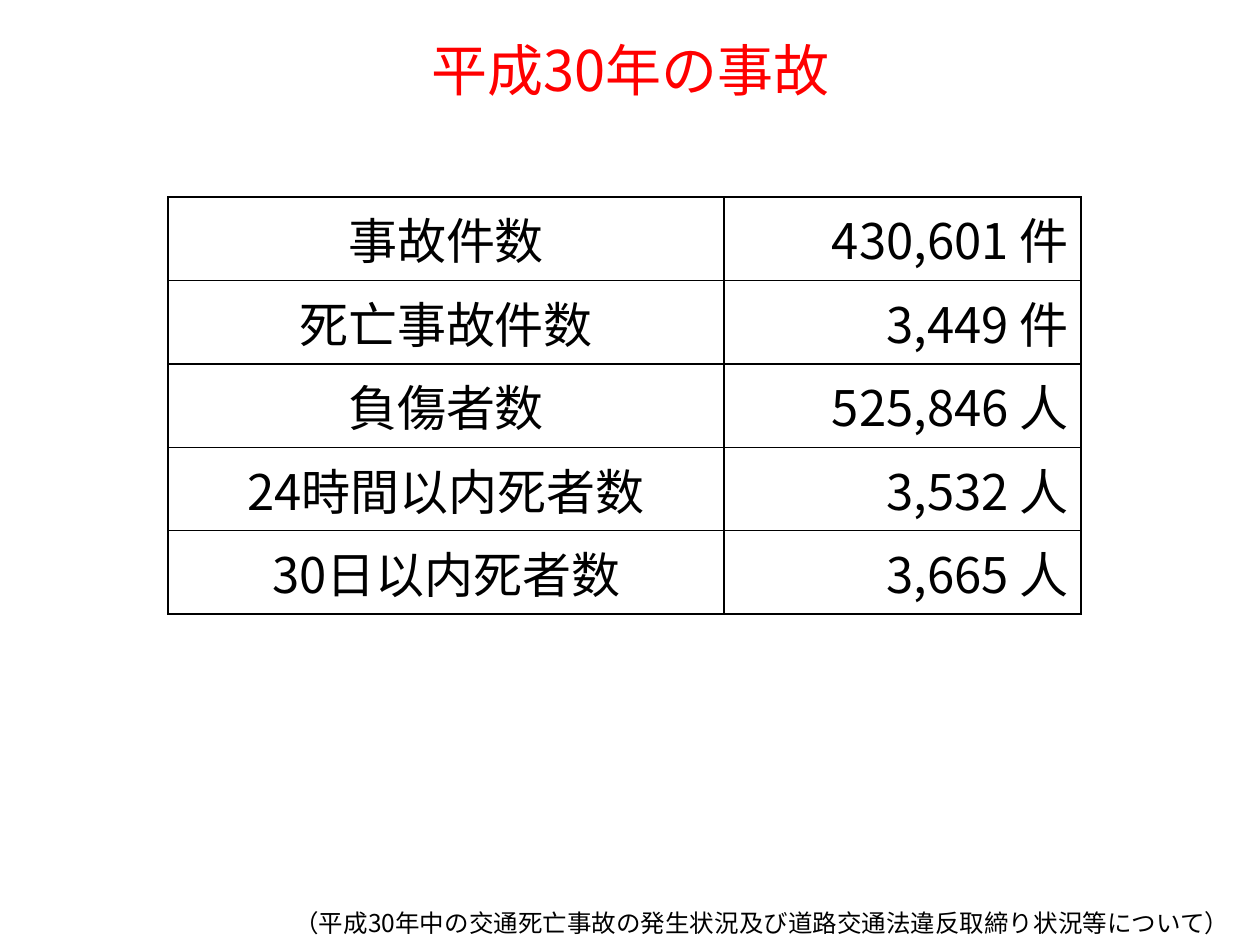
from lxml.etree import SubElement
from pptx import Presentation
from pptx.dml.color import RGBColor
from pptx.enum.text import MSO_ANCHOR as Anchor, MSO_AUTO_SIZE as AutoSize, PP_ALIGN as Align
from pptx.oxml.ns import qn
from pptx.util import Emu, Pt

PX = 914400 // 126
FONT = "Noto Sans CJK JP"
COLORS = {"title": "FF0000", "text": "000000", "border": "000000"}
COLUMN_WIDTHS = (556, 357)
ROW_HEIGHTS = (79, 79, 79, 82, 82)
ACCIDENTS = (
    ("事故件数", "430,601 件"),
    ("死亡事故件数", "3,449 件"),
    ("負傷者数", "525,846 人"),
    ("24時間以内死者数", "3,532 人"),
    ("30日以内死者数", "3,665 人"),
)


def px(length):
    """Turn whole pixels into EMU."""
    return Emu(length * PX)


def add_run(paragraph, text, size, color, align):
    """Add one formatted run to an aligned paragraph."""
    paragraph.alignment = align
    run = paragraph.add_run()
    run.text = text
    run.font.size = Pt(size)
    run.font.name = FONT
    run.font.color.rgb = RGBColor.from_string(COLORS[color])
    SubElement(run.font._element, qn("a:ea"), typeface=FONT)


def add_title(slide, text):
    """Place and fill the title placeholder."""
    title = slide.shapes.title
    title.left, title.top, title.width, title.height = map(px, (95, 26, 1071, 87))
    frame = title.text_frame
    frame.vertical_anchor = Anchor.MIDDLE
    frame.auto_size = AutoSize.NONE
    add_run(frame.paragraphs[0], text, 32, "title", Align.CENTER)


def set_borders(cell):
    """Draw a thin line on all four sides of a cell."""
    properties = cell._tc.get_or_add_tcPr()
    for side in ("lnL", "lnR", "lnT", "lnB"):
        line = SubElement(properties, qn(f"a:{side}"), w=str(Pt(1)))
        fill = SubElement(line, qn("a:solidFill"))
        SubElement(fill, qn("a:srgbClr"), val=COLORS["border"])


def fill_cell(cell, text, align):
    """Write a table cell with its borders and spacing."""
    set_borders(cell)
    cell.fill.background()
    paragraph = cell.text_frame.paragraphs[0]
    add_run(paragraph, text, 28, "text", align)
    spacing = SubElement(paragraph._p.get_or_add_pPr(), qn("a:spcBef"))
    SubElement(spacing, qn("a:spcPct"), val="20000")


def add_accident_table(slide):
    """Add the table of accident figures."""
    size = sum(COLUMN_WIDTHS), sum(ROW_HEIGHTS)
    table = slide.shapes.add_table(
        len(ACCIDENTS), len(COLUMN_WIDTHS), *map(px, (168, 197, *size))
    ).table
    table.first_row = table.horz_banding = False
    for column, width in zip(table.columns, COLUMN_WIDTHS):
        column.width = px(width)
    for row, height, entries in zip(table.rows, ROW_HEIGHTS, ACCIDENTS):
        row.height = px(height)
        for cell, text, align in zip(row.cells, entries, (Align.CENTER, Align.RIGHT)):
            fill_cell(cell, text, align)


def add_source_note(slide, text):
    """Add the source note at the bottom."""
    frame = slide.shapes.add_textbox(*map(px, (282, 902, 977, 43))).text_frame
    frame.word_wrap = True
    frame.auto_size = AutoSize.SHAPE_TO_FIT_TEXT
    add_run(frame.paragraphs[0], text, 14, "text", Align.LEFT)


def main():
    """Build and save the accident slide."""
    deck = Presentation()
    deck.slide_width, deck.slide_height = px(1260), px(945)
    slide = deck.slides.add_slide(deck.slide_layouts[5])
    add_title(slide, "平成30年の事故")
    add_accident_table(slide)
    add_source_note(slide, "（平成30年中の交通死亡事故の発生状況及び道路交通法違反取締り状況等について）")
    deck.save("out.pptx")


if __name__ == "__main__":
    main()
